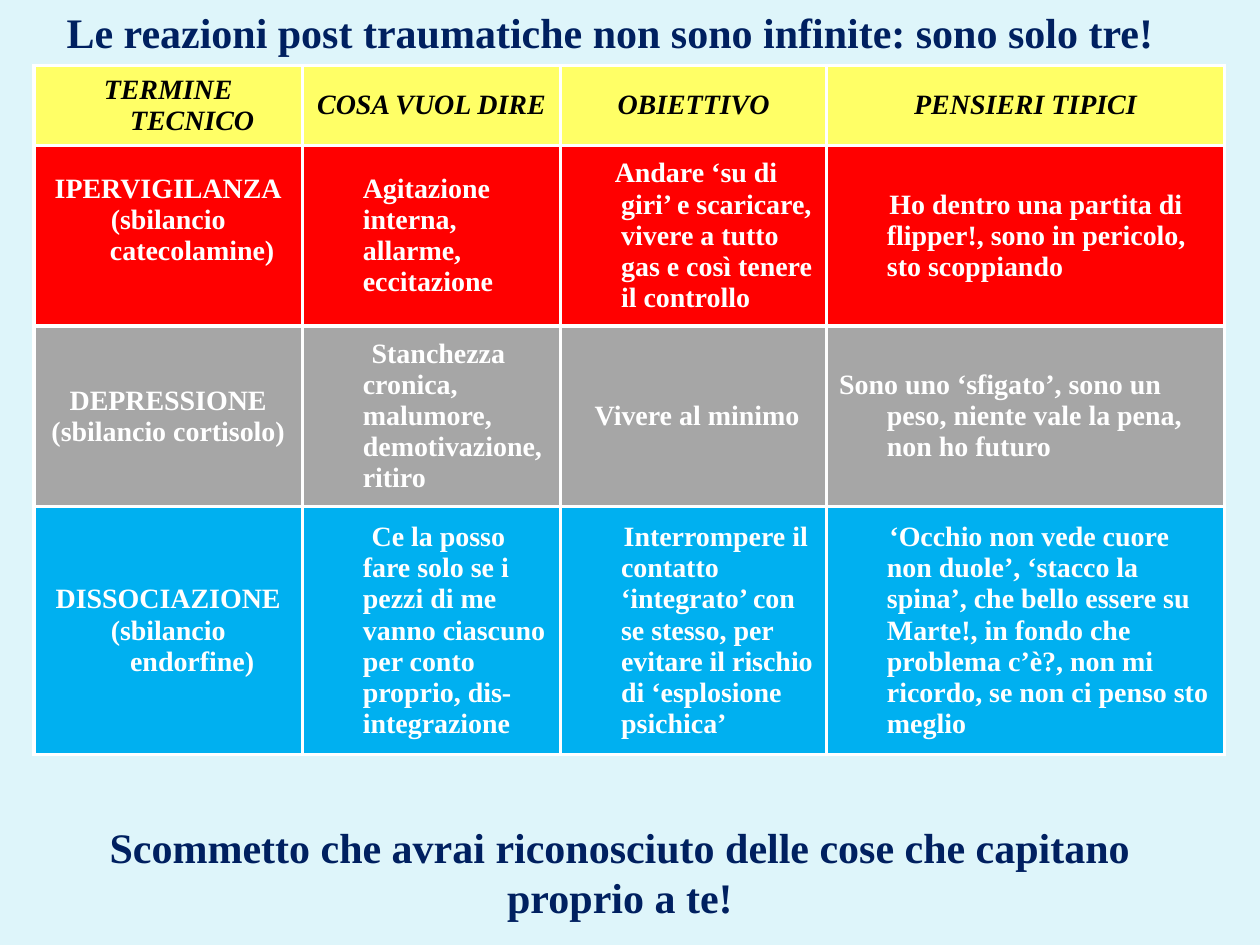
from lxml import etree
from pptx import Presentation
from pptx.dml.color import RGBColor
from pptx.enum.text import MSO_ANCHOR, PP_ALIGN
from pptx.oxml.ns import qn
from pptx.util import Inches, Pt

LEFT, CENTER = PP_ALIGN.LEFT, PP_ALIGN.CENTER
MIDDLE = MSO_ANCHOR.MIDDLE
FONT = "Times New Roman"
NAVY, WHITE, BLACK = "002060", "FFFFFF", "000000"
HANG = 0.38

# Content: (text, alignment, top, height)
CAPTIONS = [
    ("Le reazioni post traumatiche non sono infinite: sono solo tre!", LEFT, 0, 0.5),
    ("Scommetto che avrai riconosciuto delle cose che capitano proprio a te!",
     CENTER, 6.47, 0.91),
]
HEADERS = ["TERMINE TECNICO", "COSA VUOL DIRE", "OBIETTIVO", "PENSIERI TIPICI"]
# Each reaction: fill, row height, extra bottom margin of the term, term lines,
# then (text, first line indent) for the other columns
REACTIONS = [
    ("FF0000", 1.43, 0.25, ["IPERVIGILANZA", "(sbilancio catecolamine)"], [
        ("Agitazione interna, allarme, eccitazione", 0),
        ("Andare ‘su di giri’ e scaricare, vivere a tutto gas e così tenere il controllo",
         -0.05),
        ("Ho dentro una partita di flipper!, sono in pericolo, sto scoppiando", 0.02)]),
    ("A6A6A6", 1.43, 0, ["DEPRESSIONE", "(sbilancio cortisolo)"], [
        ("Stanchezza cronica, malumore, demotivazione, ritiro", 0.07),
        ("Vivere al minimo", -0.21),
        ("Sono uno ‘sfigato’, sono un peso, niente vale la pena, non ho futuro", -HANG)]),
    ("00B0F0", 1.97, 0, ["DISSOCIAZIONE", "(sbilancio endorfine)"], [
        ("Ce la posso fare solo se i pezzi di me vanno ciascuno per conto proprio, "
         "dis-integrazione", 0.07),
        ("Interrompere il contatto ‘integrato’ con se stesso, per evitare il rischio "
         "di ‘esplosione psichica’", 0.02),
        ("‘Occhio non vede cuore non duole’, ‘stacco la spina’, che bello essere su "
         "Marte!, in fondo che problema c’è?, non mi ricordo, se non ci penso sto meglio",
         0.02)]),
]
COLUMN_WIDTHS = [2.13, 2.05, 2.11, 3.16]
HEADER_FILL, HEADER_HEIGHT = "FFFF66", 0.63


def rgb(color):
    return RGBColor.from_string(color)


def write(frame, lines, size=16, color=WHITE, italic=False, align=LEFT,
          margin=0, indent=0):
    frame.word_wrap = True
    for number, line in enumerate(lines):
        para = frame.add_paragraph() if number else frame.paragraphs[0]
        para.alignment = align
        properties = para._p.get_or_add_pPr()
        properties.set("marL", str(Inches(margin)))
        properties.set("indent", str(Inches(indent)))
        span = para.add_run()
        span.text = line
        font = span.font
        font.name, font.size = FONT, Pt(size)
        font.bold, font.italic = True, italic
        font.color.rgb = rgb(color)


def style_cell(cell, fill):
    cell.vertical_anchor = MIDDLE
    properties = cell._tc.get_or_add_tcPr()
    for side in ("a:lnL", "a:lnR", "a:lnT", "a:lnB"):
        border = etree.SubElement(properties, qn(side), w=str(Pt(2.25)))
        solid = etree.SubElement(border, qn("a:solidFill"))
        etree.SubElement(solid, qn("a:srgbClr"), val=WHITE)
    cell.fill.solid()
    cell.fill.fore_color.rgb = rgb(fill)


deck = Presentation()
deck.slide_width, deck.slide_height = Inches(10), Inches(7.5)
page = deck.slides.add_slide(deck.slide_layouts[6])
page.background.fill.solid()
page.background.fill.fore_color.rgb = rgb("DEF5FA")

# Title and closing line
for text, align, top, height in CAPTIONS:
    box = page.shapes.add_textbox(Inches(0.43), Inches(top), Inches(8.98), Inches(height))
    write(box.text_frame, [text], size=24, color=NAVY, align=align)

# Table grid
row_heights = [HEADER_HEIGHT] + [reaction[1] for reaction in REACTIONS]
table = page.shapes.add_table(
    len(row_heights), len(COLUMN_WIDTHS), Inches(0.27), Inches(0.52),
    Inches(sum(COLUMN_WIDTHS)), Inches(sum(row_heights))).table
for column, width in zip(table.columns, COLUMN_WIDTHS):
    column.width = Inches(width)
for row, height in zip(table.rows, row_heights):
    row.height = Inches(height)

# Header row
for column, header in enumerate(HEADERS):
    cell = table.cell(0, column)
    style_cell(cell, HEADER_FILL)
    write(cell.text_frame, [header], color=BLACK, italic=True, align=CENTER,
          margin=HANG, indent=-HANG)

# One row per reaction
for row, (fill, _, lift, term, details) in enumerate(REACTIONS, start=1):
    cell = table.cell(row, 0)
    style_cell(cell, fill)
    cell.margin_bottom = Inches(0.05 + lift)
    write(cell.text_frame, term, align=CENTER, margin=HANG, indent=-HANG)
    for column, (text, indent) in enumerate(details, start=1):
        cell = table.cell(row, column)
        style_cell(cell, fill)
        write(cell.text_frame, [text], margin=HANG, indent=indent)

deck.save("out.pptx")
